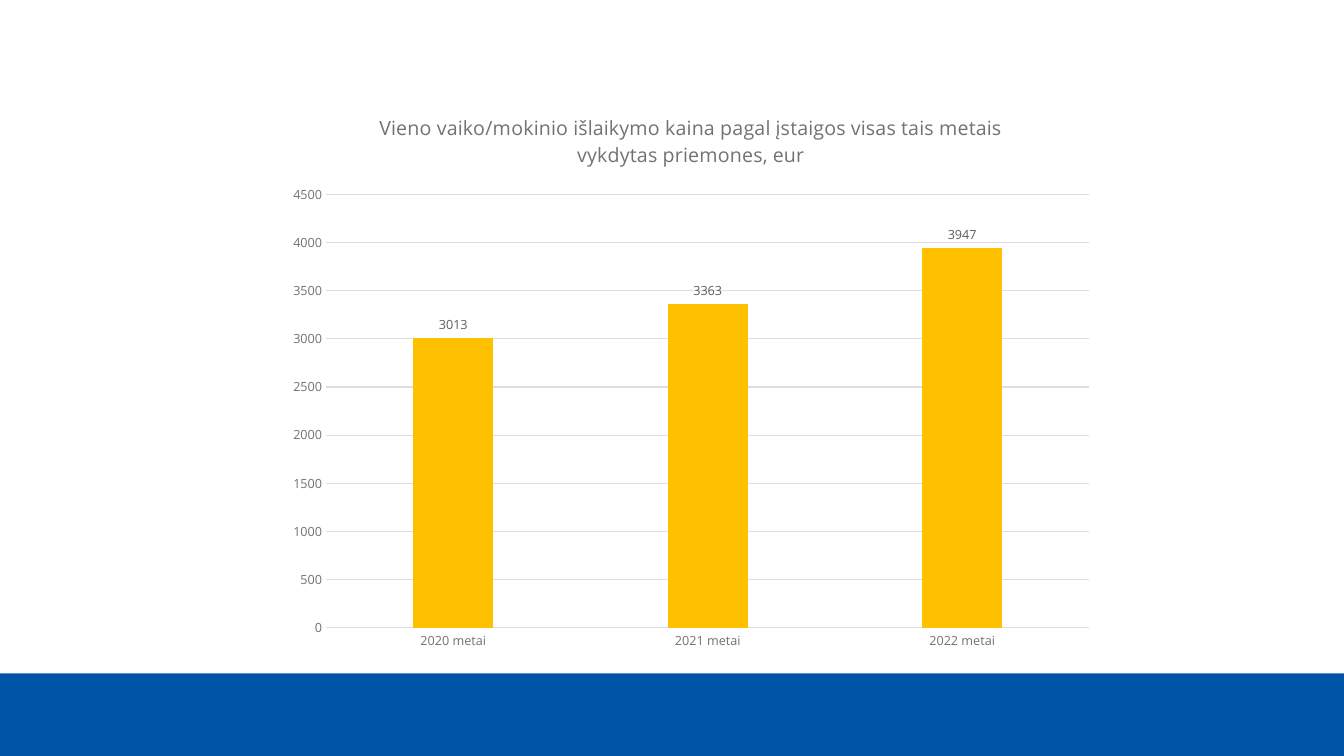
from lxml import etree
from pptx import Presentation
from pptx.chart.data import CategoryChartData
from pptx.dml.color import RGBColor
from pptx.enum.chart import XL_CHART_TYPE as ChartType
from pptx.enum.chart import XL_LABEL_POSITION as LabelPosition
from pptx.enum.chart import XL_TICK_MARK as TickMark
from pptx.enum.shapes import MSO_SHAPE as Shape
from pptx.oxml.ns import qn
from pptx.util import Inches, Pt

FONT = "Open Sans"
GREY, GRID = "727272", "DEDEDE"
TITLE = ("Vieno vaiko/mokinio išlaikymo kaina pagal įstaigos "
         "visas tais metais vykdytas priemones, eur")
COSTS = {"2020 metai": 3013, "2021 metai": 3363, "2022 metai": 3947}


def color(hex_code):
    return RGBColor.from_string(hex_code)


def style_font(font, size, hex_code):
    font.name = FONT
    font.size = Pt(size)
    font.bold = False
    font.color.rgb = color(hex_code)


def style_line(line, hex_code):
    line.color.rgb = color(hex_code)
    line.width = Pt(0.75)


def set_layout(parent, index, **settings):
    """Place a chart part by fractions of the chart area."""
    for old in parent.findall(qn("c:layout")):
        parent.remove(old)
    layout = etree.Element(qn("c:layout"))
    manual = etree.SubElement(layout, qn("c:manualLayout"))
    for tag, value in settings.items():
        etree.SubElement(manual, qn(f"c:{tag}")).set("val", str(value))
    parent.insert(index, layout)


def add_footer_band(slide, left, top, width, height):
    band = slide.shapes.add_shape(Shape.RECTANGLE, left, top, width, height)
    band.shadow.inherit = False
    band.fill.solid()
    band.fill.fore_color.rgb = color("0054A5")
    band.line.fill.background()


def add_cost_chart(slide, left, top, width, height):
    data = CategoryChartData(number_format="0")
    data.categories = list(COSTS)
    data.add_series("Series 1", list(COSTS.values()))
    chart = slide.shapes.add_chart(
        ChartType.COLUMN_CLUSTERED, left, top, width, height, data).chart
    style_font(chart.font, 10, "262626")
    chart.has_legend = False

    # Title
    chart.has_title = True
    title = chart.chart_title
    title.include_in_layout = False
    heading = title.text_frame.paragraphs[0].add_run()
    heading.text = TITLE
    style_font(heading.font, 14, GREY)

    # Axes
    years, euros = chart.category_axis, chart.value_axis
    for axis in (years, euros):
        axis.major_tick_mark = axis.minor_tick_mark = TickMark.NONE
        style_font(axis.tick_labels.font, 9, GREY)
    style_line(years.format.line, GRID)
    euros.format.line.fill.background()
    euros.minimum_scale, euros.maximum_scale, euros.major_unit = 0, 4500, 500
    euros.has_major_gridlines = True
    style_line(euros.major_gridlines.format.line, GRID)
    euros.tick_labels.number_format = "0"
    euros.tick_labels.number_format_is_linked = False

    # Columns and their values
    plot = chart.plots[0]
    plot.vary_by_categories = False
    plot.gap_width, plot.overlap = 219, -27
    columns = plot.series[0]
    columns.format.fill.solid()
    columns.format.fill.fore_color.rgb = color("FFC000")
    labels = columns.data_labels
    labels.show_value = True
    labels.position = LabelPosition.OUTSIDE_END
    labels.number_format = "0"
    labels.number_format_is_linked = False
    style_font(labels.font, 9, "5C5C5C")

    # Plot area and title positions
    plot_area = chart.element.find(".//" + qn("c:plotArea"))
    set_layout(plot_area, 0, layoutTarget="inner", xMode="edge", yMode="edge",
               x=0.06, y=0.18, w=0.92, h=0.76)
    set_layout(title.element if hasattr(title, "element") else title._element,
               1, xMode="edge", yMode="edge", x=0.12, y=0.03)


def main():
    deck = Presentation()
    deck.slide_width, deck.slide_height = Inches(13.33), Inches(7.5)
    slide = deck.slides.add_slide(deck.slide_layouts[6])
    add_footer_band(slide, 0, Inches(6.68), deck.slide_width, Inches(0.82))
    add_cost_chart(slide, Inches(2.74), Inches(0.91), Inches(8.23), Inches(5.66))
    deck.save("out.pptx")


if __name__ == "__main__":
    main()
